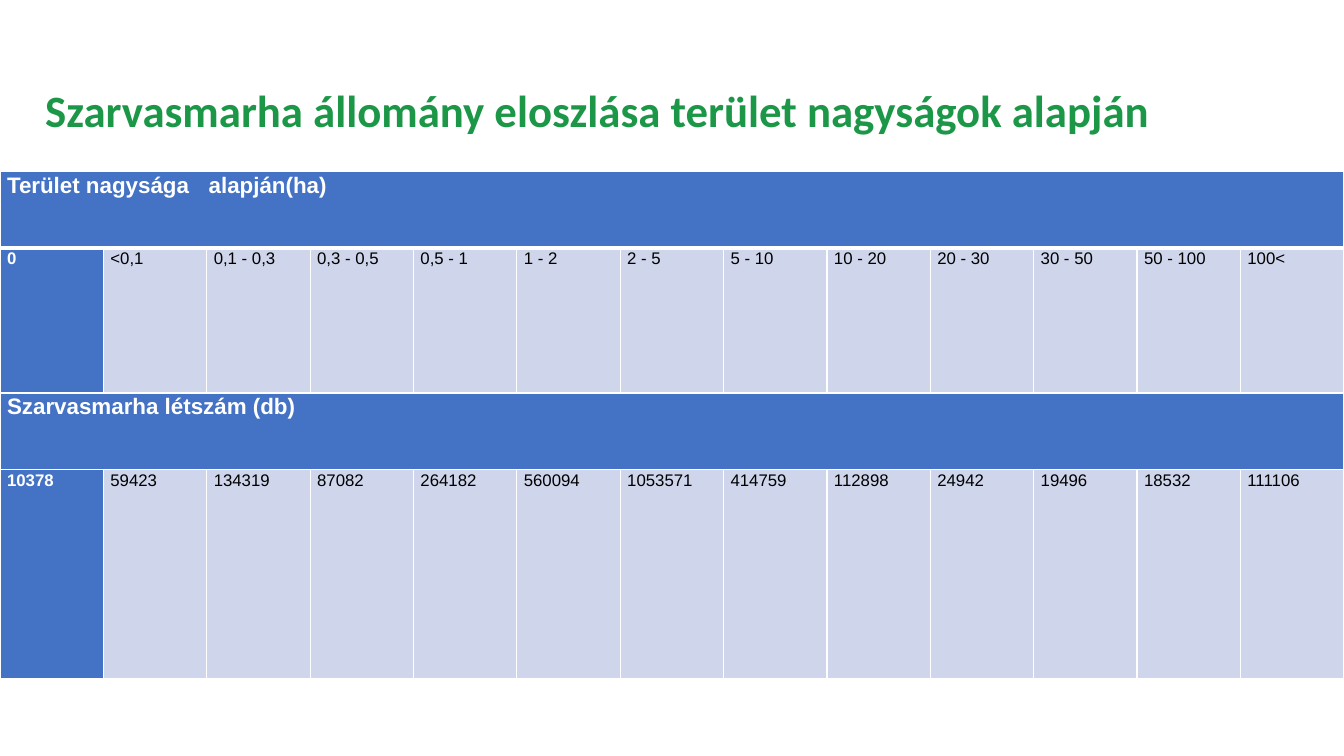
from dataclasses import dataclass

from lxml.etree import SubElement
from pptx import Presentation
from pptx.dml.color import RGBColor
from pptx.enum.text import MSO_ANCHOR as Anchor, PP_ALIGN as Align
from pptx.oxml.ns import qn
from pptx.util import Inches, Pt


@dataclass(frozen=True)
class Theme:
    green: str = "1C9748"
    blue: str = "4472C4"
    pale: str = "CFD5EA"
    white: str = "FFFFFF"
    black: str = "000000"
    title_font: str = "Calibri"
    table_font: str = "Arial"
    title_size: int = 32
    heading_size: int = 16
    value_size: int = 12
    thin: int = 1
    thick: int = 3


THEME = Theme()
WIDTH, HEIGHT = Inches(13.33), Inches(7.5)
ROW_HEIGHTS = [0.76, 1.44, 0.76, 2.07]
SECTIONS = [
    (
        "Terület nagysága\talapján(ha)",
        ["0", "<0,1", "0,1 - 0,3", "0,3 - 0,5", "0,5 - 1", "1 - 2", "2 - 5",
         "5 - 10", "10 - 20", "20 - 30", "30 - 50", "50 - 100", "100<"],
    ),
    (
        "Szarvasmarha létszám (db)",
        ["10378", "59423", "134319", "87082", "264182", "560094", "1053571",
         "414759", "112898", "24942", "19496", "18532", "111106"],
    ),
]


def write_text(frame, text, *, font, size, color, bold=False, align=Align.LEFT, spacing=1.0):
    frame.word_wrap = True
    paragraph = frame.paragraphs[0]
    paragraph.alignment = align
    paragraph.line_spacing = spacing
    run = paragraph.add_run()
    run.text = text
    run.font.name = font
    run.font.size = Pt(size)
    run.font.bold = bold
    run.font.color.rgb = RGBColor.from_string(color)


def add_title(slide, text):
    box = slide.shapes.add_textbox(
        Inches(0.35), Inches(0.4), Inches(12.64), Inches(1.45)
    )
    box.text_frame.vertical_anchor = Anchor.MIDDLE
    write_text(box.text_frame, text, font=THEME.title_font, size=THEME.title_size,
               color=THEME.green, bold=True, spacing=0.9)


def add_borders(cell, top, bottom):
    properties = cell._tc.get_or_add_tcPr()
    edges = {"L": THEME.thin, "R": THEME.thin, "T": top, "B": bottom}
    for side, width in edges.items():
        line = SubElement(properties, qn(f"a:ln{side}"), w=str(Pt(width)))
        fill = SubElement(line, qn("a:solidFill"))
        SubElement(fill, qn("a:srgbClr"), val=THEME.white)


def style_cell(cell, row, fill):
    add_borders(
        cell,
        top=THEME.thick if row == 1 else THEME.thin,
        bottom=THEME.thick if row == 0 else THEME.thin,
    )
    cell.fill.solid()
    cell.fill.fore_color.rgb = RGBColor.from_string(fill)
    cell.margin_left = cell.margin_right = Inches(0.07)
    cell.margin_top = cell.margin_bottom = 0


def write_cell(cell, text, size, color, bold):
    write_text(cell.text_frame, text, font=THEME.table_font, size=size, color=color,
               bold=bold, align=Align.JUSTIFY, spacing=1.07)


def add_section(table, first_row, heading, values):
    for column, value in enumerate(values):
        is_label = column == 0
        style_cell(table.cell(first_row, column), first_row, THEME.blue)
        value_cell = table.cell(first_row + 1, column)
        style_cell(value_cell, first_row + 1, THEME.blue if is_label else THEME.pale)
        write_cell(value_cell, value, THEME.value_size,
                   THEME.white if is_label else THEME.black, is_label)
    heading_cell = table.cell(first_row, 0)
    heading_cell.merge(table.cell(first_row, len(values) - 1))
    write_cell(heading_cell, heading, THEME.heading_size, THEME.white, True)


def add_cattle_table(slide):
    column_count = len(SECTIONS[0][1])
    table = slide.shapes.add_table(
        len(ROW_HEIGHTS), column_count, 0, Inches(1.7), WIDTH, Inches(sum(ROW_HEIGHTS))
    ).table
    for row, height in zip(table.rows, ROW_HEIGHTS):
        row.height = Inches(height)
    for index, (heading, values) in enumerate(SECTIONS):
        add_section(table, index * 2, heading, values)


def main():
    presentation = Presentation()
    presentation.slide_width, presentation.slide_height = WIDTH, HEIGHT
    slide = presentation.slides.add_slide(presentation.slide_layouts[6])
    add_title(slide, "Szarvasmarha állomány eloszlása terület nagyságok alapján")
    add_cattle_table(slide)
    presentation.save("out.pptx")


if __name__ == "__main__":
    main()
